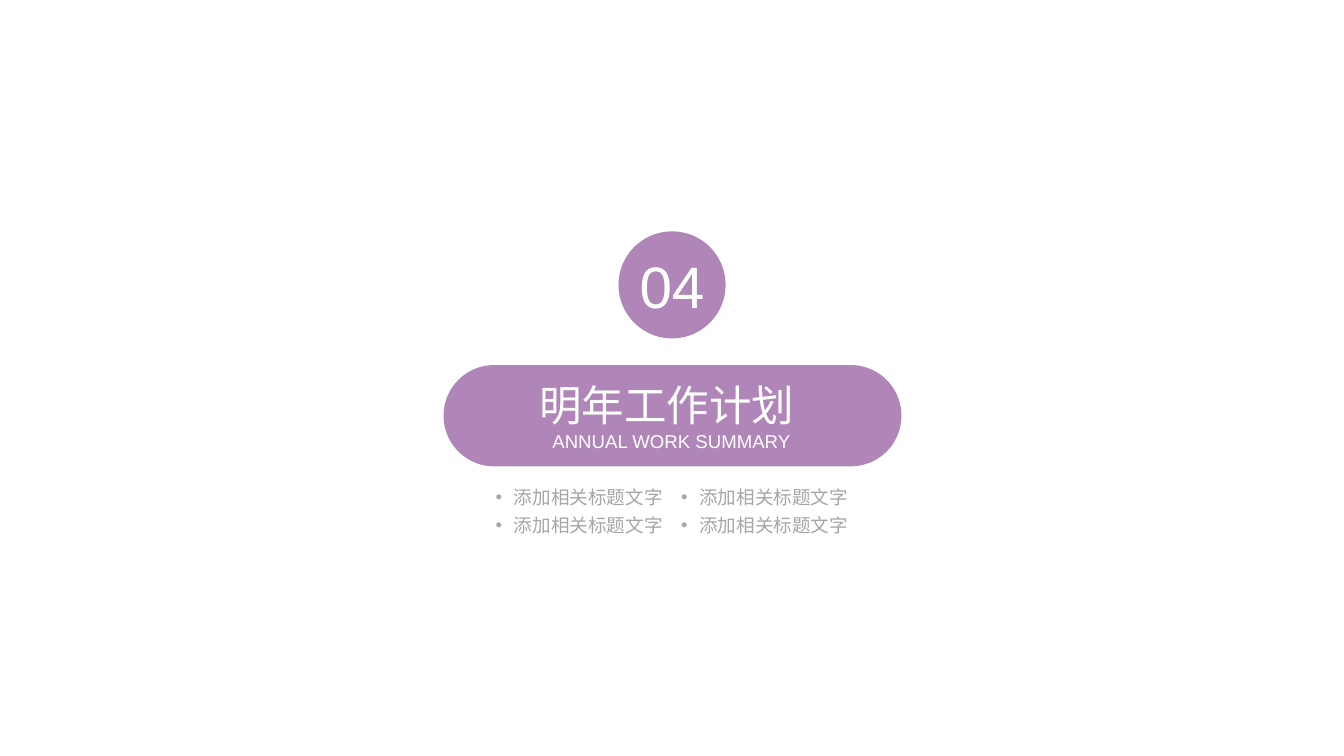
from itertools import product

from lxml import etree
from pptx import Presentation, util as u
from pptx.dml import color
from pptx.enum import shapes, text
from pptx.oxml import ns

WIDE, HIGH = u.Inches(14.06), u.Inches(7.91)
PURPLE, WHITE, GREY = "B086B8", "FFFFFF", "A6A6A6"


def rgb(code):
    return color.RGBColor.from_string(code)


def place(left, top, width, height):
    return [int(share * side / 100) for share, side in
            zip((left, top, width, height), (WIDE, HIGH, WIDE, HIGH))]


def style(run, size, tint):
    run.font.name = "Arial"
    run.font.size = u.Pt(size)
    run.font.color.rgb = rgb(tint)


def fit(frame, wrap=True):
    frame.margin_left = frame.margin_right = 0
    frame.margin_top = frame.margin_bottom = 0
    frame.word_wrap = wrap
    frame.paragraphs[0].alignment = text.PP_ALIGN.CENTER


def solid(slide, kind, area):
    shape = slide.shapes.add_shape(kind, *place(*area))
    shape.shadow.inherit = False
    shape.fill.solid()
    shape.fill.fore_color.rgb = rgb(PURPLE)
    shape.line.fill.background()
    return shape


def badge(slide, label, area):
    frame = solid(slide, shapes.MSO_SHAPE.OVAL, area).text_frame
    frame.text = label
    fit(frame)
    frame.vertical_anchor = text.MSO_ANCHOR.MIDDLE
    style(frame.paragraphs[0].runs[0], 44, WHITE)


def title(slide, head, sub, area):
    frame = slide.shapes.add_textbox(*place(*area)).text_frame
    fit(frame)
    frame.vertical_anchor = text.MSO_ANCHOR.MIDDLE
    para = frame.paragraphs[0]
    para.text = head
    para.add_line_break()
    para.add_run().text = sub
    for run, size in zip(para.runs, (32, 14)):
        style(run, size, WHITE)


def bullet(slide, label, area):
    frame = slide.shapes.add_textbox(*place(*area)).text_frame
    frame.text = label
    fit(frame, wrap=False)
    para = frame.paragraphs[0]
    style(para.runs[0], 14, GREY)
    props = para._p.get_or_add_pPr()
    props.set("marL", str(u.Inches(0.19)))
    props.set("indent", str(u.Inches(-0.19)))
    etree.SubElement(props, ns.qn("a:buFont"), typeface="Arial")
    etree.SubElement(props, ns.qn("a:buChar"), char="•")


def main():
    deck = Presentation()
    deck.slide_width, deck.slide_height = WIDE, HIGH
    slide = deck.slides.add_slide(deck.slide_layouts[6])
    pill = solid(slide, shapes.MSO_SHAPE.ROUNDED_RECTANGLE,
                 (33, 48.29, 34.07, 13.4))
    pill.adjustments[0] = 0.5
    badge(slide, "04", (46.02, 30.6, 7.97, 14.16))
    title(slide, "明年工作计划 ", "ANNUAL WORK SUMMARY",
          (40.11, 50.06, 19.7, 9.73))
    for row, col in product(range(2), repeat=2):
        bullet(slide, "添加相关标题文字",
               (36.84 + 13.8 * col, 64.22 + 3.79 * row, 12.52, 3.03))
    deck.save("out.pptx")


if __name__ == "__main__":
    main()
